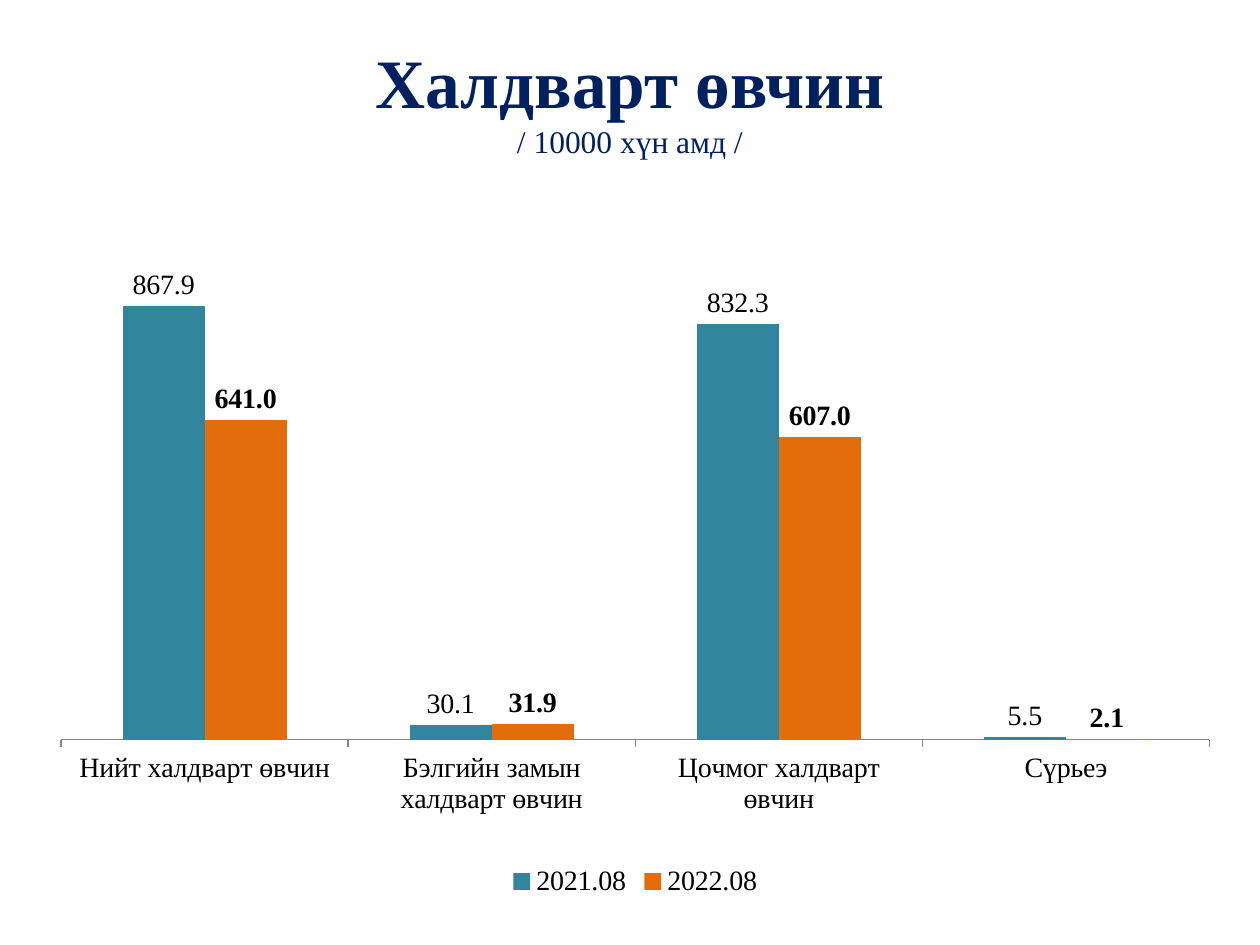
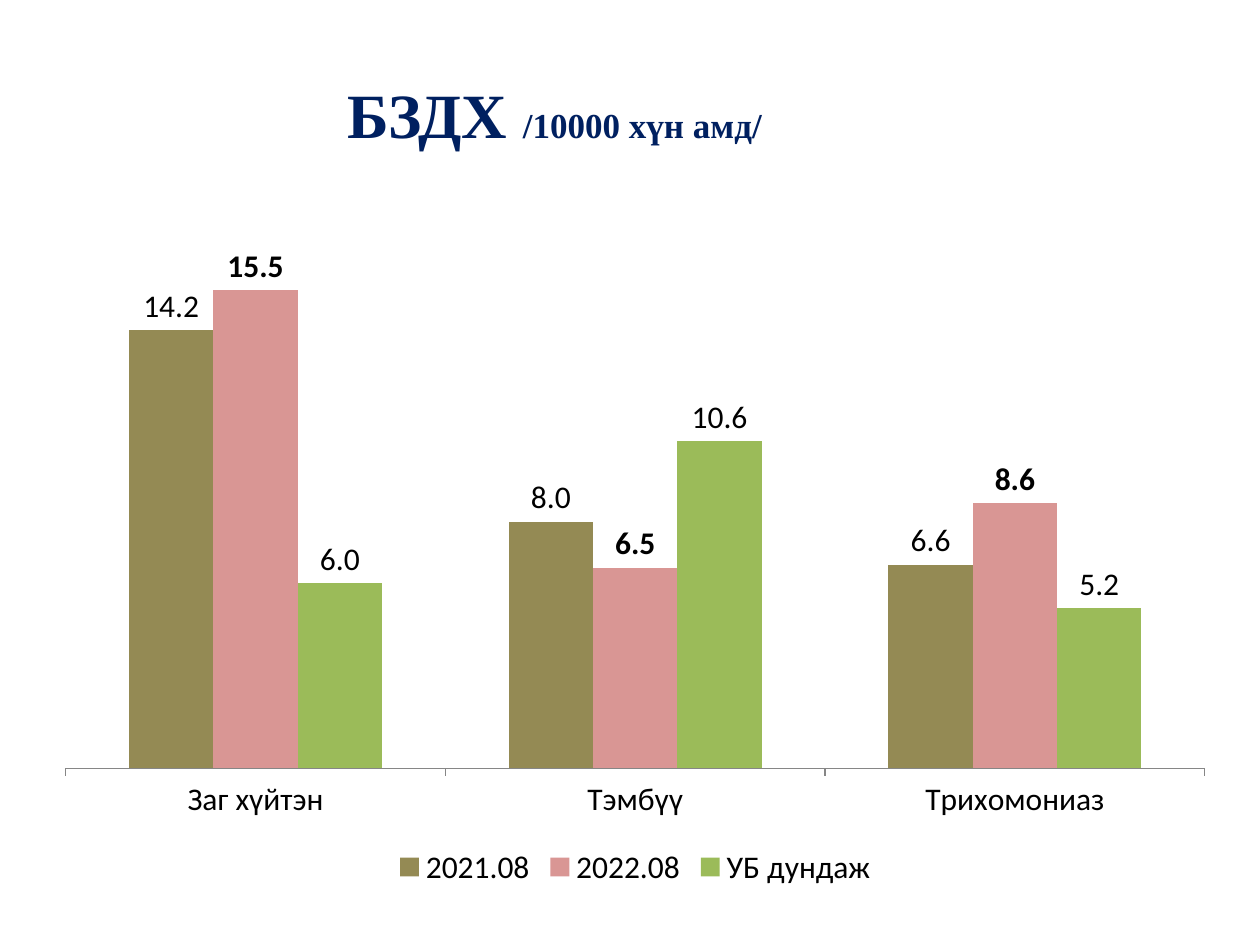
from lxml import etree
from pptx import Presentation
from pptx.chart.data import CategoryChartData
from pptx.dml.color import RGBColor
from pptx.enum.chart import XL_CHART_TYPE as ChartType, XL_LABEL_POSITION as LabelPosition
from pptx.enum.chart import XL_LEGEND_POSITION as LegendPosition, XL_TICK_MARK as TickMark
from pptx.enum.text import MSO_ANCHOR as Anchor, PP_ALIGN as Align
from pptx.oxml.ns import qn
from pptx.util import Pt

TITLE_FONT = "Times New Roman"
TITLE_COLOR = "002060"
TEXT_COLOR = "000000"
AXIS_COLOR = "868686"
BOLD_SERIES = "2022.08"
CHART_LEFT, CHART_WIDTH = 24, 678
TITLE_LEFT, TITLE_WIDTH = 36, 648

SLIDES = [
    {
        "title": [("Халдварт өвчин", 39.6, True), None, ("/ 10000 хүн амд /", 18, False)],
        "title_top": 18, "title_height": 78,
        "first_indent": -20, "extra_right": 0, "extra_bottom": 0,
        "chart_top": 126, "chart_height": 390,
        "font": "Times New Roman", "size": 16, "maximum": 1000,
        "plot": {"x": 0.016, "y": 0.029, "w": 0.968, "h": 0.732},
        "categories": ["Нийт халдварт өвчин", "Бэлгийн замын халдварт өвчин",
                       "Цочмог халдварт өвчин", "Сүрьеэ"],
        "series": [
            ("2021.08", "31859C", (867.9, 30.1, 832.3, 5.5)),
            ("2022.08", "E46C0A", (641.0, 31.9, 607.0, 2.1)),
        ],
    },
    {
        "title": [("БЗДХ ", 36, True), ("/10000 хүн амд/", 20, True)],
        "title_top": 30, "title_height": 90,
        "first_indent": 0, "extra_right": 86, "extra_bottom": 21,
        "chart_top": 114, "chart_height": 396,
        "font": "Calibri", "size": 18, "maximum": 18,
        "plot": None,
        "categories": ["Заг хүйтэн", "Тэмбүү", "Трихомониаз"],
        "series": [
            ("2021.08", "948A54", (14.2, 8.0, 6.6)),
            ("2022.08", "D99694", (15.5, 6.5, 8.6)),
            ("УБ дундаж", "9BBB59", (6.0, 10.6, 5.2)),
        ],
    },
]


def color(hex_text):
    return RGBColor.from_string(hex_text)


def style_font(font, name, size, hex_text, bold=False):
    font.name = name
    font.size = Pt(size)
    font.bold = bold
    font.color.rgb = color(hex_text)


def add_title(page, content):
    box = page.shapes.add_textbox(Pt(TITLE_LEFT), Pt(content["title_top"]),
                                  Pt(TITLE_WIDTH), Pt(content["title_height"]))
    frame = box.text_frame
    frame.word_wrap = True
    frame.vertical_anchor = Anchor.MIDDLE
    frame.margin_right = Pt(7.2 + content["extra_right"])
    frame.margin_bottom = Pt(3.6 + content["extra_bottom"])
    para = frame.paragraphs[0]
    para.alignment = Align.CENTER
    if content["first_indent"]:
        para._p.get_or_add_pPr().set("indent", str(Pt(content["first_indent"])))
    for part in content["title"]:
        if part is None:
            para.add_line_break()
            continue
        text, size, bold = part
        span = para.add_run()
        span.text = text
        style_font(span.font, TITLE_FONT, size, TITLE_COLOR, bold)


def place_plot(chart, plot):
    area = chart._chartSpace.chart.plotArea
    for old in area.findall(qn("c:layout")):
        area.remove(old)
    layout = etree.Element(qn("c:layout"))
    manual = etree.SubElement(layout, qn("c:manualLayout"))
    settings = [("layoutTarget", "inner"), ("xMode", "edge"), ("yMode", "edge"), *plot.items()]
    for tag, value in settings:
        etree.SubElement(manual, qn(f"c:{tag}")).set("val", str(value))
    area.insert(0, layout)


def add_column_chart(page, content):
    data = CategoryChartData(number_format="0.0")
    data.categories = content["categories"]
    for name, _, values in content["series"]:
        data.add_series(name, values)
    chart = page.shapes.add_chart(
        ChartType.COLUMN_CLUSTERED, Pt(CHART_LEFT), Pt(content["chart_top"]),
        Pt(CHART_WIDTH), Pt(content["chart_height"]), data).chart
    font_name, size = content["font"], content["size"]
    style_font(chart.font, font_name, size, TEXT_COLOR)
    chart.has_title = False
    chart.has_legend = True
    chart.legend.position = LegendPosition.BOTTOM
    chart.legend.include_in_layout = False

    chart.value_axis.visible = False
    chart.value_axis.has_major_gridlines = False
    chart.value_axis.minimum_scale = 0
    chart.value_axis.maximum_scale = content["maximum"]
    axis = chart.category_axis
    axis.major_tick_mark = TickMark.OUTSIDE
    axis.format.line.color.rgb = color(AXIS_COLOR)
    axis.format.line.width = Pt(0.75)

    plot = chart.plots[0]
    plot.vary_by_categories = False
    plot.gap_width = 150
    plot.overlap = 0
    for series, (name, fill, _) in zip(plot.series, content["series"]):
        series.format.fill.solid()
        series.format.fill.fore_color.rgb = color(fill)
        labels = series.data_labels
        labels.show_value = True
        labels.number_format = "0.0"
        labels.number_format_is_linked = False
        labels.position = LabelPosition.OUTSIDE_END
        style_font(labels.font, font_name, size, TEXT_COLOR, name == BOLD_SERIES)
    if content["plot"]:
        place_plot(chart, content["plot"])


def main():
    deck = Presentation()
    deck.slide_width, deck.slide_height = Pt(720), Pt(540)
    for content in SLIDES:
        page = deck.slides.add_slide(deck.slide_layouts[6])
        add_title(page, content)
        add_column_chart(page, content)
    deck.save("out.pptx")


if __name__ == "__main__":
    main()
